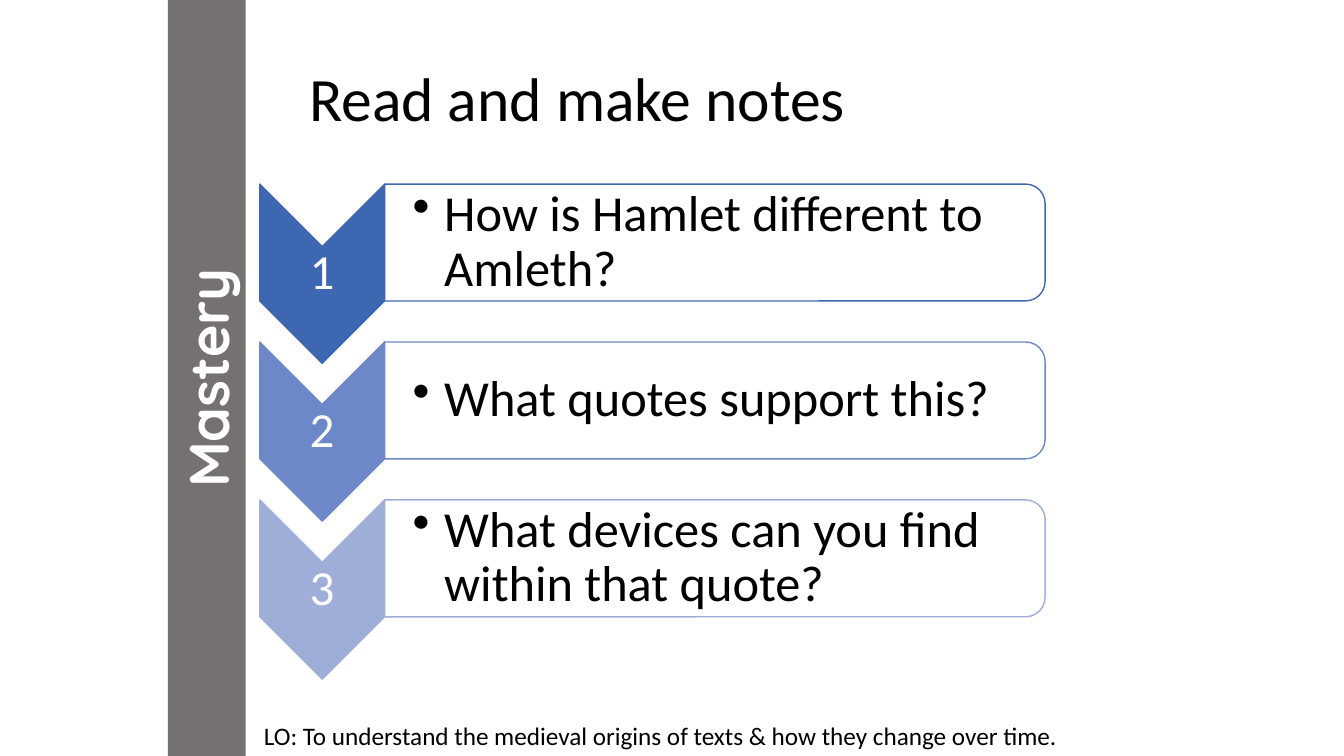
from lxml import etree
from pptx import Presentation
from pptx.dml.color import RGBColor
from pptx.enum import shapes, text
from pptx.oxml.ns import qn
from pptx.util import Pt

KIND = shapes.MSO_SHAPE
MID = text.MSO_ANCHOR.MIDDLE
MAIN = "Calibri"
STEPS = [
    ("3E67B2", "How is Hamlet different to Amleth?"),
    ("6C88C8", "What quotes support this?"),
    ("9FAED8", "What devices can you find within that quote?"),
]


def tint(code):
    return RGBColor.from_string(code)


def upright(slide, kind, box, turn, fill, line=None):
    """Add a shape turned by a quarter so that it looks as large as box."""
    x, y, w, h = box
    shape = slide.shapes.add_shape(
        kind, Pt(x + (w - h) / 2), Pt(y + (h - w) / 2), Pt(h), Pt(w))
    shape.rotation = turn
    shape.shadow.inherit = False
    shape.fill.solid()
    shape.fill.fore_color.rgb = tint(fill)
    if line:
        shape.line.color.rgb = tint(line)
        shape.line.width = Pt(1)
    else:
        shape.line.fill.background()
    return shape


def write(frame, words, size, color, face=MAIN, bold=False):
    frame.word_wrap = True
    par = frame.paragraphs[0]
    par.text = words
    par.font.size = Pt(size)
    par.font.name = face
    par.font.bold = bold
    par.font.color.rgb = tint(color)
    return par


def label(slide, box, words, size, color="000000", insets=None):
    frame = slide.shapes.add_textbox(*map(Pt, box)).text_frame
    frame.vertical_anchor = MID
    if insets:
        left, rest = insets
        frame.margin_left = Pt(left)
        frame.margin_top = frame.margin_right = frame.margin_bottom = Pt(rest)
    par = write(frame, words, size, color)
    par.line_spacing = 0.9
    return par


def bullet(par, indent):
    props = par._p.get_or_add_pPr()
    props.set("marL", str(Pt(indent)))
    props.set("indent", str(-Pt(indent)))
    mark = etree.Element(qn("a:buChar"), char="•")
    rest = props.find(qn("a:defRPr"))
    if rest is None:
        props.append(mark)
    else:
        rest.addprevious(mark)


def step(slide, box, num, color, words):
    x, y, w, h = box
    wide, tall = 89.3, 83.5
    upright(slide, KIND.CHEVRON, (x, y, wide, h), 90, color, color)
    par = label(slide, (x, y + wide / 2, wide, h - wide), str(num), 35,
                "FFFFFF", (1.6, 1.6))
    par.alignment = text.PP_ALIGN.CENTER
    card = upright(slide, KIND.ROUND_2_SAME_RECTANGLE,
                   (x + wide, y, w - wide, tall), 90, "FFFFFF", color)
    clr = card.fill._xPr.find(qn("a:solidFill"))[0]
    etree.SubElement(clr, qn("a:alpha"), val="90000")
    par = label(slide, (x + wide, y + 4.2, w - wide - 4, tall - 8.4),
                words, 36, insets=(20, 2))
    bullet(par, 22.5)


def steps(slide, box):
    x, y, w, h = box
    high = 128
    pitch = (h - high) / (len(STEPS) - 1)
    for i, (color, words) in enumerate(STEPS):
        step(slide, (x, y + i * pitch, w, high), i + 1, color, words)


def side(slide, box):
    bar = upright(slide, KIND.RECTANGLE, box, 270, "767171")
    frame = bar.text_frame
    frame.vertical_anchor = MID
    par = write(frame, "Mastery", 40, "FFFFFF", "Quicksand", True)
    par.alignment = text.PP_ALIGN.CENTER


def goal(slide, box):
    frame = slide.shapes.add_textbox(*map(Pt, box)).text_frame
    write(frame, "LO: To understand the medieval origins of texts & how they "
          "change over time.", 18, "000000")


def main():
    deck = Presentation()
    deck.slide_width, deck.slide_height = Pt(960), Pt(540)
    slide = deck.slides.add_slide(deck.slide_layouts[6])
    label(slide, (213.8, 13.7, 574, 118), "Read and make notes", 44)
    steps(slide, (185.5, 131.5, 561, 353.6))
    goal(slide, (181.4, 511.2, 638, 29))
    side(slide, (120, 0, 55.5, 540))
    deck.save("out.pptx")


if __name__ == "__main__":
    main()
